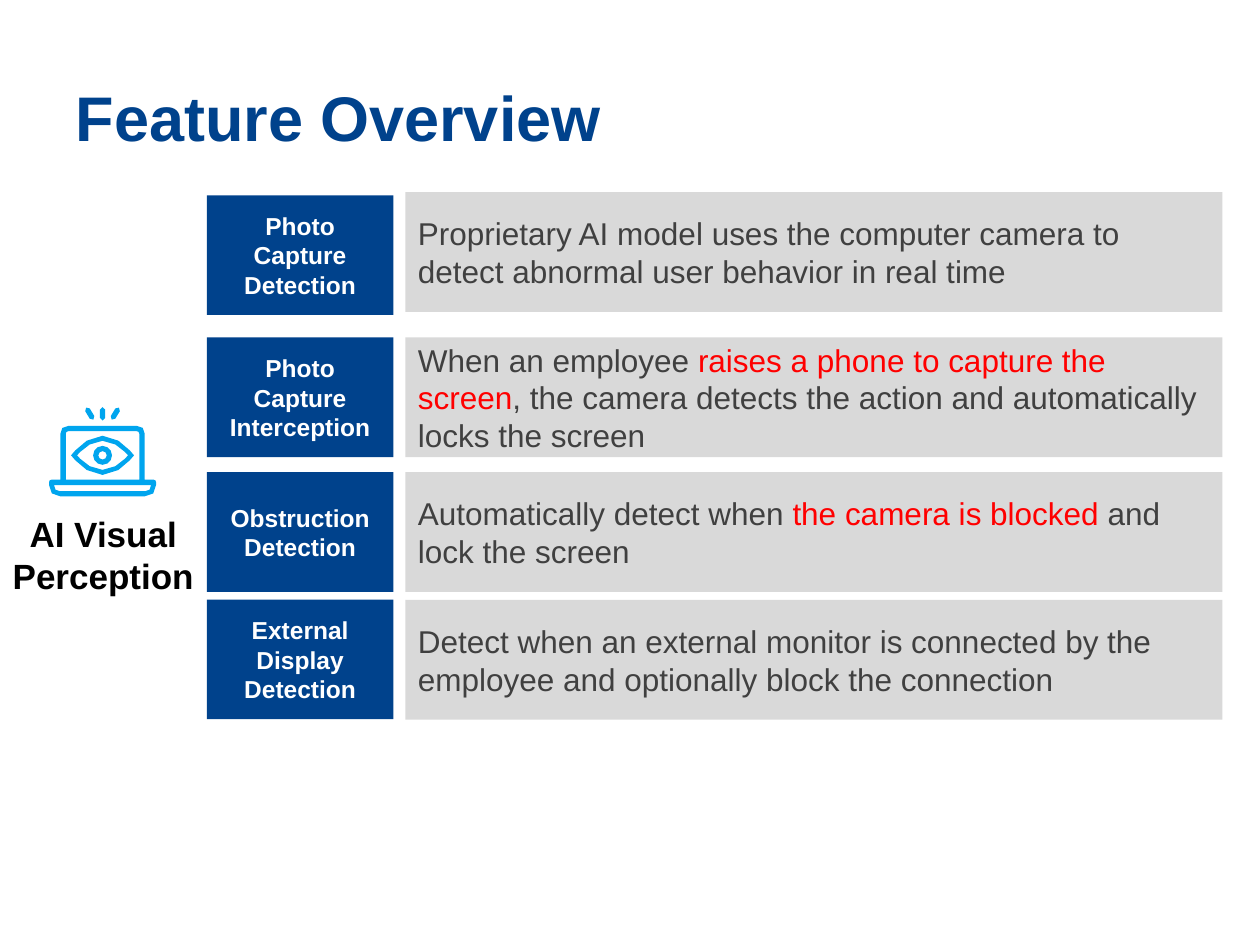
import math

from pptx import Presentation
from pptx import util as u
from pptx.dml.color import RGBColor
from pptx.enum import shapes, text

COLORS = {"navy": "00428C", "grey": "D9D9D9", "body": "404040", "alert": "FF0000",
          "white": "FFFFFF", "black": "000000", "sky": "00A5EE"}
FORMATS = {
    "title": {"size": u.Pt(36), "bold": True},
    "label": {"size": u.Pt(20), "bold": True},
    "feature": {"size": u.Pt(14), "bold": True},
    "description": {"size": u.Pt(18), "bold": False},
}
ROW_HEIGHT = 68.4
FEATURE_LEFT, FEATURE_WIDTH = 118.2, 106.6
DESCRIPTION_LEFT, DESCRIPTION_WIDTH = 231.7, 466.8

# Feature, its top, description top, description runs with their colours
FEATURES = [
    ("Photo Capture Detection", 111.6, 109.8, [
        ("Proprietary AI model uses the computer camera to detect abnormal "
         "user behavior in real time", "body")]),
    ("Photo Capture Interception", 192.8, 192.8, [
        ("When an employee ", "body"),
        ("raises a phone to capture the screen", "alert"),
        (", the camera detects the action and automatically locks the screen", "body")]),
    ("Obstruction Detection", 269.8, 269.8, [
        ("Automatically detect when ", "body"),
        ("the camera is blocked ", "alert"),
        ("and lock the screen", "body")]),
    ("External Display Detection", 342.6, 342.8, [
        ("Detect when an external monitor is connected by the employee and "
         "optionally block the connection", "body")]),
]

ICON_X, EYE_Y = 58.6, 260.2
UNITS_PER_POINT = 100


def color(name):
    return RGBColor.from_string(COLORS[name])


def paint(shape, fill):
    shape.fill.solid()
    shape.fill.fore_color.rgb = color(fill)
    shape.line.fill.background()
    shape.shadow.inherit = False


def write(shape, runs, style, align, anchor):
    frame = shape.text_frame
    frame.word_wrap = True
    frame.vertical_anchor = anchor
    paragraph = frame.paragraphs[0]
    paragraph.alignment = align
    for words, run_color in runs:
        run = paragraph.add_run()
        run.text = words
        run.font.name = "Arial"
        run.font.color.rgb = color(run_color)
        for attribute, value in FORMATS[style].items():
            setattr(run.font, attribute, value)


def add_panel(slide, left, top, width, fill, runs, style, align):
    panel = slide.shapes.add_shape(
        shapes.MSO_SHAPE.RECTANGLE, u.Pt(left), u.Pt(top), u.Pt(width), u.Pt(ROW_HEIGHT))
    paint(panel, fill)
    write(panel, runs, style, align, text.MSO_ANCHOR.MIDDLE)


def add_title(slide):
    title = slide.shapes.title
    title.left, title.top, title.width, title.height = map(u.Pt, (36, 21.6, 648, 90))
    title.text_frame.auto_size = text.MSO_AUTO_SIZE.NONE
    write(title, [("Feature Overview", "navy")], "title",
          text.PP_ALIGN.LEFT, text.MSO_ANCHOR.MIDDLE)


def add_label(slide):
    label = slide.shapes.add_textbox(u.Pt(0), u.Pt(289.4), u.Pt(118), u.Pt(55.4))
    write(label, [("AI Visual Perception", "black")], "label",
          text.PP_ALIGN.CENTER, text.MSO_ANCHOR.TOP)
    label.text_frame.auto_size = text.MSO_AUTO_SIZE.SHAPE_TO_FIT_TEXT


def oval(half_width, half_height, power=1, count=12):
    """Ellipse around the eye centre; power 2 gives a pointed lens."""
    points = []
    for step in range(count):
        angle = step * math.tau / count
        rise = math.copysign(abs(math.sin(angle)) ** power, math.sin(angle))
        points.append((ICON_X + half_width * math.cos(angle), EYE_Y + half_height * rise))
    return points


def symmetric(right_half):
    """Rounded outline mirrored about the icon axis from (offset, y, radius) corners."""
    corners = right_half + [(-x, y, r) for x, y, r in reversed(right_half)]
    points = []
    for i, (x, y, radius) in enumerate(corners):
        ends = []
        for near_x, near_y, _ in (corners[i - 1], corners[(i + 1) % len(corners)]):
            share = radius / math.dist((x, y), (near_x, near_y))
            ends.append((x + (near_x - x) * share, y + (near_y - y) * share))
        for t in (0, 0.5, 1) if radius else (0,):
            points.append(tuple(
                (1 - t) ** 2 * a + 2 * t * (1 - t) * b + t * t * c
                for a, b, c in zip(ends[0], (x, y), ends[1])))
    return [(ICON_X + x, y) for x, y in points]


def ray(top_offset, top, bottom_offset, bottom, radius=1.5):
    """Round-ended stroke."""
    heading = math.atan2(bottom - top, bottom_offset - top_offset)
    points = []
    for offset, y, start in ((bottom_offset, bottom, heading - math.pi / 2),
                             (top_offset, top, heading + math.pi / 2)):
        for step in range(3):
            angle = start + step * math.pi / 2
            points.append((ICON_X + offset + radius * math.cos(angle),
                           y + radius * math.sin(angle)))
    return points


def add_laptop_icon(slide):
    contours = [
        # Laptop outline, screen opening and base opening
        symmetric([(24.1, 243.4, 4.5), (24.1, 274.1, 0), (30.6, 274.1, 1.5),
                   (30.6, 283.6, 6.5)]),
        symmetric([(21, 246.4, 1.5), (21, 274.1, 0)]),
        symmetric([(27.6, 277.2, 0), (27.6, 280.6, 3)]),
        # Eye
        oval(18, 11.2, 2), oval(14.6, 8.3, 2), oval(5.4, 5.4), oval(2.4, 2.4, count=8),
        # Rays
        ray(-8.6, 234.2, -6, 238.5), ray(0, 234.1, 0, 238.8), ray(8.6, 234.2, 6, 238.5),
    ]
    builder = None
    for contour in contours:
        start, *rest = [(x * UNITS_PER_POINT, y * UNITS_PER_POINT) for x, y in contour]
        if builder is None:
            builder = slide.shapes.build_freeform(*start, scale=u.Pt(1) / UNITS_PER_POINT)
        else:
            builder.move_to(*start)
        builder.add_line_segments(rest, close=True)
    paint(builder.convert_to_shape(), "sky")


def main():
    deck = Presentation()
    deck.slide_width, deck.slide_height = u.Pt(720), u.Pt(540)
    slide = deck.slides.add_slide(deck.slide_layouts[5])

    add_title(slide)
    add_label(slide)
    for feature, feature_top, description_top, description in FEATURES:
        add_panel(slide, FEATURE_LEFT, feature_top, FEATURE_WIDTH, "navy",
                  [(feature, "white")], "feature", text.PP_ALIGN.CENTER)
        add_panel(slide, DESCRIPTION_LEFT, description_top, DESCRIPTION_WIDTH, "grey",
                  description, "description", text.PP_ALIGN.LEFT)
    add_laptop_icon(slide)

    deck.save("out.pptx")


if __name__ == "__main__":
    main()
